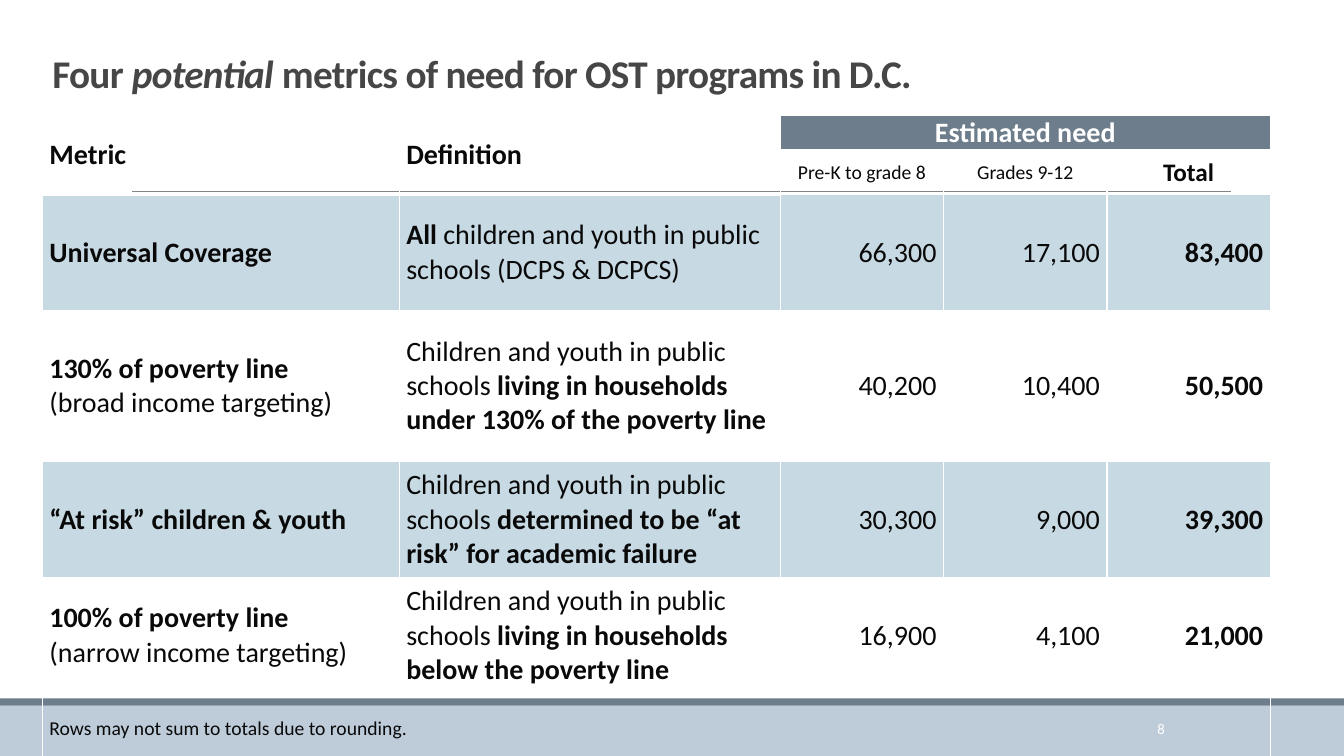
from lxml.etree import SubElement
from pptx import Presentation
from pptx.dml.color import RGBColor
from pptx.enum.shapes import MSO_CONNECTOR, MSO_SHAPE
from pptx.enum.text import MSO_ANCHOR, PP_ALIGN
from pptx.oxml.ns import qn
from pptx.util import Inches, Pt

INK, WHITE, SLATE, BLUE = "090909", "FFFFFF", "6D7D8C", "C7D9E3"
LEFT, CENTER, RIGHT = PP_ALIGN.LEFT, PP_ALIGN.CENTER, PP_ALIGN.RIGHT
WIDTHS = [3.54, 3.78, 1.62, 1.62, 1.62]
HEIGHTS = [0.36, 0.43, 1.15, 1.5, 1.15, 1.15, 0.69]
METRICS = [
    ("*Universal Coverage*",
     "*All* children and youth in public schools (DCPS & DCPCS)",
     "66,300", "17,100", "83,400"),
    ("*130% of poverty line*\n(broad income targeting)",
     "Children and youth in public schools *living in households under 130% of the poverty line*",
     "40,200", "10,400", "50,500"),
    ("*“At risk” children & youth*",
     "Children and youth in public schools *determined to be “at risk” for academic failure*",
     "30,300", "9,000", "39,300"),
    ("*100% of poverty line*\n(narrow income targeting)",
     "Children and youth in public schools *living in households below the poverty line*",
     "16,900", "4,100", "21,000"),
]


def color(code):
    """Turn a hex string into a colour."""
    return RGBColor.from_string(code)


class Deck:
    """Hold the style and the current slide."""

    def __init__(self):
        """Start a wide deck with one titled slide."""
        self.font = "Calibri"
        self.prs = Presentation()
        self.prs.slide_width, self.prs.slide_height = Inches(13.33), Inches(7.5)
        self.slide = self.prs.slides.add_slide(self.prs.slide_layouts[5])
        self.shapes = self.slide.shapes

    def text(self, para, text, size, ink=INK, bold=None, align=LEFT, italic=False):
        """Fill a paragraph, with its starred parts bold or italic."""
        para.alignment = align
        font = para.font
        font.name, font.size, font.bold = self.font, Pt(size), bold
        font.color.rgb = color(ink)
        for i, part in enumerate(text.split("*")):
            for j, line in enumerate(part.split("\n")):
                if j:
                    para.add_line_break()
                if line:
                    run = para.add_run()
                    run.text = line
                    if i % 2 and italic:
                        run.font.italic = True
                    elif i % 2:
                        run.font.bold = True

    def title(self, text):
        """Place and fill the title."""
        shape = self.shapes.title
        shape.left, shape.top = Inches(0.42), Inches(0.28)
        shape.width, shape.height = Inches(12), Inches(0.73)
        frame = shape.text_frame
        frame.vertical_anchor = MSO_ANCHOR.BOTTOM
        para = frame.paragraphs[0]
        self.text(para, text, 28, "464646", True, italic=True)
        para.line_spacing = 0.85
        for run in para.runs:
            run._r.get_or_add_rPr().set("spc", "-50")

    def band(self, top, height, fill):
        """Draw a band across the slide."""
        shape = self.shapes.add_shape(MSO_SHAPE.RECTANGLE, 0, Inches(top),
                                      self.prs.slide_width, Inches(height))
        shape.shadow.inherit = False
        shape.fill.solid()
        shape.fill.fore_color.rgb = color(fill)
        shape.line.fill.background()

    def rule(self, start, end, top):
        """Draw a thin level line."""
        line = self.shapes.add_connector(MSO_CONNECTOR.STRAIGHT, Inches(start), Inches(top),
                                         Inches(end), Inches(top))
        line.line.color.rgb = color("848484")
        line.line.width = Pt(0.5)
        SubElement(line._element.spPr, qn("a:effectLst"))

    def number(self, text):
        """Add the slide number."""
        box = self.shapes.add_textbox(Inches(10.22), Inches(7.03), Inches(1.43), Inches(0.4))
        frame = box.text_frame
        frame.word_wrap = True
        frame.vertical_anchor = MSO_ANCHOR.MIDDLE
        self.text(frame.paragraphs[0], text, 10.5, WHITE, align=RIGHT)

    def grid(self, left, top):
        """Add the bare table with white borders."""
        table = self.shapes.add_table(len(HEIGHTS), len(WIDTHS), Inches(left), Inches(top),
                                      Inches(sum(WIDTHS)), Inches(sum(HEIGHTS))).table
        table.first_row = table.horz_banding = False
        for col, width in zip(table.columns, WIDTHS):
            col.width = Inches(width)
        for row, height in zip(table.rows, HEIGHTS):
            row.height = Inches(height)
        for r in range(len(HEIGHTS)):
            for c in range(len(WIDTHS)):
                cell = table.cell(r, c)
                cell.margin_left = cell.margin_right = Inches(0.07)
                cell.margin_top = cell.margin_bottom = 0
                cell.vertical_anchor = MSO_ANCHOR.MIDDLE
                self.border(cell, 3 if r == 0 else 1)
                cell.fill.background()
        return table

    def border(self, cell, base):
        """Line a cell in white, with its own width at the base."""
        props = cell._tc.get_or_add_tcPr()
        for side, width in (("L", 1), ("R", 1), ("T", 1), ("B", base)):
            line = SubElement(props, qn(f"a:ln{side}"), w=str(Pt(width)))
            fill = SubElement(line, qn("a:solidFill"))
            SubElement(fill, qn("a:srgbClr"), val=WHITE)

    def cell(self, cell, text, size=20, fill=None, **style):
        """Fill one table cell."""
        if fill:
            cell.fill.solid()
            cell.fill.fore_color.rgb = color(fill)
        self.text(cell.text_frame.paragraphs[0], text, size, **style)


def main():
    """Build the slide."""
    deck = Deck()
    deck.band(7, 0.5, "BECCDA")
    deck.band(6.93, 0.07, SLATE)
    deck.rule(1.31, 12.21, 1.9)
    deck.title("Four *potential* metrics of need for OST programs in D.C.")

    table = deck.grid(0.42, 1.14)
    last = len(HEIGHTS) - 1
    for start, end in (((0, 0), (1, 0)), ((0, 1), (1, 1)), ((0, 2), (0, 4)), ((last, 0), (last, 4))):
        table.cell(*start).merge(table.cell(*end))
    for c, text in enumerate(("Metric", "Definition")):
        deck.cell(table.cell(0, c), text, bold=True)
    deck.cell(table.cell(0, 2), "Estimated need", fill=SLATE, ink=WHITE, bold=True, align=CENTER)
    heads = (("Pre-K to grade 8", 14, False), ("Grades 9-12", 14, False), ("Total", 18, True))
    for c, (text, size, bold) in enumerate(heads, 2):
        deck.cell(table.cell(1, c), text, size, bold=bold, align=CENTER)
    for r, metric in enumerate(METRICS, 2):
        for c, text in enumerate(metric):
            deck.cell(table.cell(r, c), text, fill=None if r % 2 else BLUE,
                      bold=True if c == 4 else None, align=RIGHT if c > 1 else LEFT)
    deck.cell(table.cell(last, 0), "Rows may not sum to totals due to rounding.", 14)

    deck.number("8")
    deck.prs.save("out.pptx")


if __name__ == "__main__":
    main()
